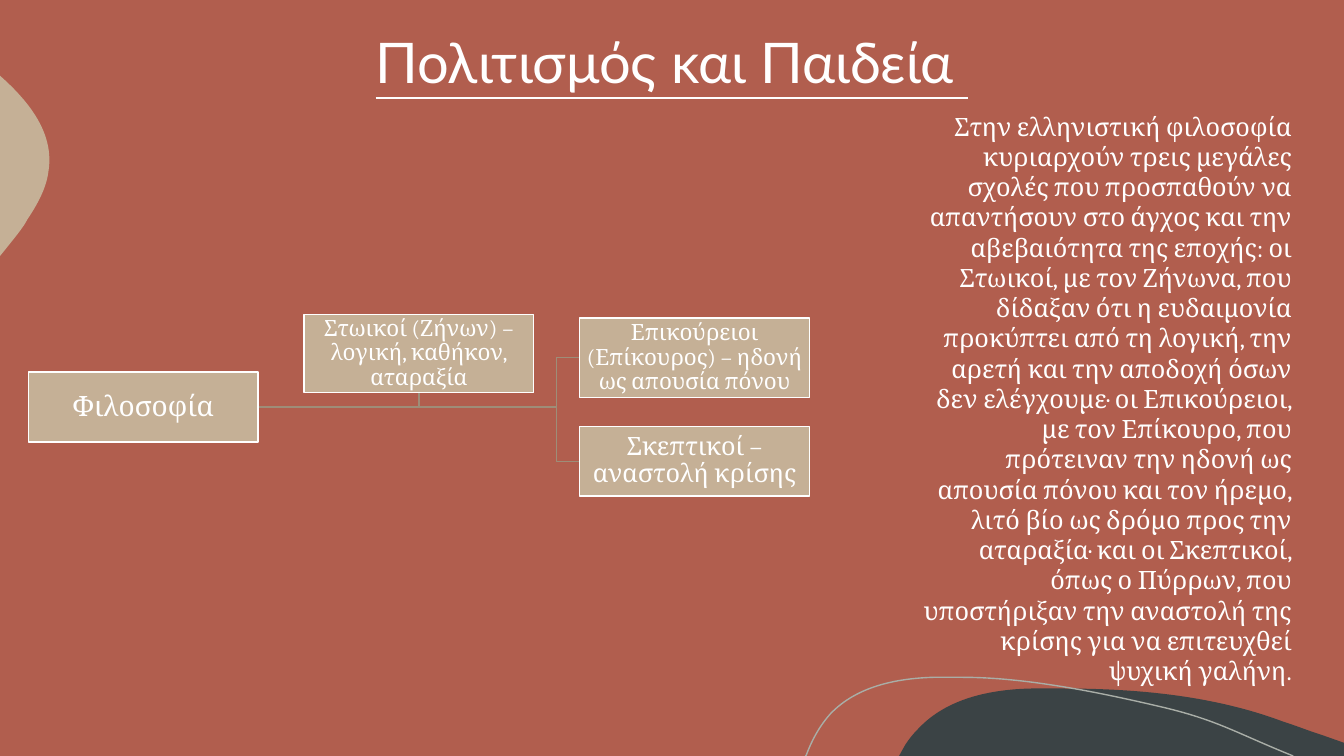
from lxml.etree import SubElement
from pptx import Presentation
from pptx.dml.color import RGBColor
from pptx.enum.shapes import MSO_SHAPE
from pptx.enum.text import MSO_ANCHOR, MSO_AUTO_SIZE, PP_ALIGN
from pptx.oxml.ns import qn
from pptx.util import Pt

WHITE = "FFFFFF"
SAND = "C5B096"
TERRACOTTA = "B15E4E"
SLATE = "3B4345"
MIST = "A9AEA7"
BRANCH = "9E8D78"

SLATE_WAVE = [
    (758.9, 491.8),
    (812.2, 491.8, 866.9, 496.8, 916.6, 515.5),
    (925.9, 518.4, 934.6, 522, 943.9, 524.9),
    (960, 530.6), (960, 540), (642.2, 540), (646.6, 532.1),
    (649.4, 527.8, 652.3, 524.2, 655.9, 520.6),
    (676.1, 499, 707, 492.5, 736.6, 491.8),
    (743.8, 491.8, 751, 491.8, 758.9, 491.8),
]
SAND_WAVE = [
    (0, 54), (0.7, 54.7),
    (21.6, 73.4, 38.9, 95.8, 34.6, 122.4),
    (33.1, 134.6, 26.6, 146.2, 19.4, 157),
    (17.3, 161.3, 12.2, 167.8, 5.8, 175.7),
    (0, 182.9),
]
MIST_CURVE = [
    (575.3, 540), (576, 539.3),
    (580.3, 527.8, 586.1, 517.7, 593.3, 509.8),
    (612, 490.3, 640.1, 484.6, 666.7, 483.8),
    (687.6, 483.8),
    (735.8, 483.8, 792, 496.1, 831.6, 505.4),
    (870.5, 514.8, 882.7, 523.4, 923.8, 540),
]
BODY = (
    "Στην ελληνιστική φιλοσοφία κυριαρχούν τρεις μεγάλες σχολές που προσπαθούν "
    "να απαντήσουν στο άγχος και την αβεβαιότητα της εποχής: οι Στωικοί, με τον "
    "Ζήνωνα, που δίδαξαν ότι η ευδαιμονία προκύπτει από τη λογική, την αρετή και "
    "την αποδοχή όσων δεν ελέγχουμε· οι Επικούρειοι, με τον Επίκουρο, που "
    "πρότειναν την ηδονή ως απουσία πόνου και τον ήρεμο, λιτό βίο ως δρόμο προς "
    "την αταραξία· και οι Σκεπτικοί, όπως ο Πύρρων, που υποστήριξαν την αναστολή "
    "της κρίσης για να επιτευχθεί ψυχική γαλήνη."
)


def color(value):
    return RGBColor.from_string(value)


def write(shape, text, size, font="Cambria", align=PP_ALIGN.CENTER,
          anchor=MSO_ANCHOR.MIDDLE, spacing=0.9, underline=None, inset=None):
    frame = shape.text_frame
    frame.word_wrap = True
    frame.auto_size = MSO_AUTO_SIZE.NONE
    frame.vertical_anchor = anchor
    if inset is not None:
        frame.margin_left = frame.margin_right = Pt(inset)
        frame.margin_top = frame.margin_bottom = Pt(inset)
    paragraph = frame.paragraphs[0]
    paragraph.alignment = align
    paragraph.line_spacing = spacing
    run = paragraph.add_run()
    run.text = text
    run.font.size = Pt(size)
    run.font.name = font
    run.font.underline = underline
    run.font.color.rgb = color(WHITE)


def bend(shape, segments):
    lines = list(shape.element.iter(qn("a:lnTo")))
    for line, segment in zip(lines, segments[1:]):
        if len(segment) == 2:
            continue
        line.tag = qn("a:cubicBezTo")
        line.remove(line[0])
        for x, y in zip(segment[::2], segment[1::2]):
            SubElement(line, qn("a:pt"), x=str(Pt(x) - shape.left), y=str(Pt(y) - shape.top))


def add_outline(slide, segments, fill=None, line=None):
    ends = [(Pt(segment[-2]), Pt(segment[-1])) for segment in segments]
    builder = slide.shapes.build_freeform(*ends[0], scale=1.0)
    builder.add_line_segments(ends[1:], close=fill is not None)
    shape = builder.convert_to_shape()
    bend(shape, segments)
    shape.shadow.inherit = False
    if fill:
        shape.fill.solid()
        shape.fill.fore_color.rgb = color(fill)
    else:
        shape.fill.background()
    if line:
        shape.line.color.rgb = color(line)
        shape.line.width = Pt(1)
    else:
        shape.line.fill.background()


def add_decoration(slide):
    add_outline(slide, SLATE_WAVE, fill=SLATE)
    add_outline(slide, SAND_WAVE, fill=SAND)
    add_outline(slide, MIST_CURVE, line=MIST)


def add_title(slide, left, top, width, height):
    title = slide.shapes.title
    title.left, title.top = Pt(left), Pt(top)
    title.width, title.height = Pt(width), Pt(height)
    write(title, "Πολιτισμός και Παιδεία ", size=40, font="Lato", underline=True)


def add_box(slide, left, top, width, height, text, size):
    box = slide.shapes.add_shape(
        MSO_SHAPE.RECTANGLE, Pt(left), Pt(top), Pt(width), Pt(height))
    box.shadow.inherit = False
    box.fill.solid()
    box.fill.fore_color.rgb = color(SAND)
    box.line.color.rgb = color(WHITE)
    box.line.width = Pt(1)
    write(box, text, size=size, inset=0.8)


def add_school_tree(slide, left, top, width, height):
    box_width = 164.2
    column_step = (width - box_width) / 2
    stoic_left, school_left = left + column_step, left + 2 * column_step
    stoic_middle = stoic_left + box_width / 2
    stoic_height = 56
    axis = top + height / 2 + 1.2
    spine = school_left - (column_step - box_width) / 2
    start = (left + box_width, axis)
    schools = [
        (top + 2.5, 56.9, "Επικούρειοι (Επίκουρος) – ηδονή ως απουσία πόνου", 16),
        (top + height - 49.9, 49.9, "Σκεπτικοί – αναστολή κρίσης", 18),
    ]

    add_outline(slide, [start, (stoic_middle, axis), (stoic_middle, top + stoic_height)],
                line=BRANCH)
    for school_top, school_height, text, size in reversed(schools):
        middle = school_top + school_height / 2
        add_outline(slide, [start, (spine, axis), (spine, middle), (school_left, middle)],
                    line=BRANCH)
    add_box(slide, left, axis - 25, box_width, 50, "Φιλοσοφία", 20)
    for school_top, school_height, text, size in schools:
        add_box(slide, school_left, school_top, box_width, school_height, text, size)
    add_box(slide, stoic_left, top, box_width, stoic_height,
            "Στωικοί (Ζήνων) – λογική, καθήκον, αταραξία", 16)


def add_body(slide, left, top, width, height):
    body = slide.shapes.add_textbox(Pt(left), Pt(top), Pt(width), Pt(height))
    write(body, BODY, size=18, align=PP_ALIGN.RIGHT, anchor=MSO_ANCHOR.TOP, spacing=1.0)


def main():
    presentation = Presentation()
    presentation.slide_width, presentation.slide_height = Pt(960), Pt(540)
    slide = presentation.slides.add_slide(presentation.slide_layouts[5])
    slide.background.fill.solid()
    slide.background.fill.fore_color.rgb = color(TERRACOTTA)
    add_decoration(slide)
    add_title(slide, 60, 17.5, 840, 58.3)
    add_school_tree(slide, 20.2, 224.6, 558, 129.8)
    add_body(slide, 648, 75.8, 281.8, 356.4)
    presentation.save("out.pptx")


if __name__ == "__main__":
    main()
